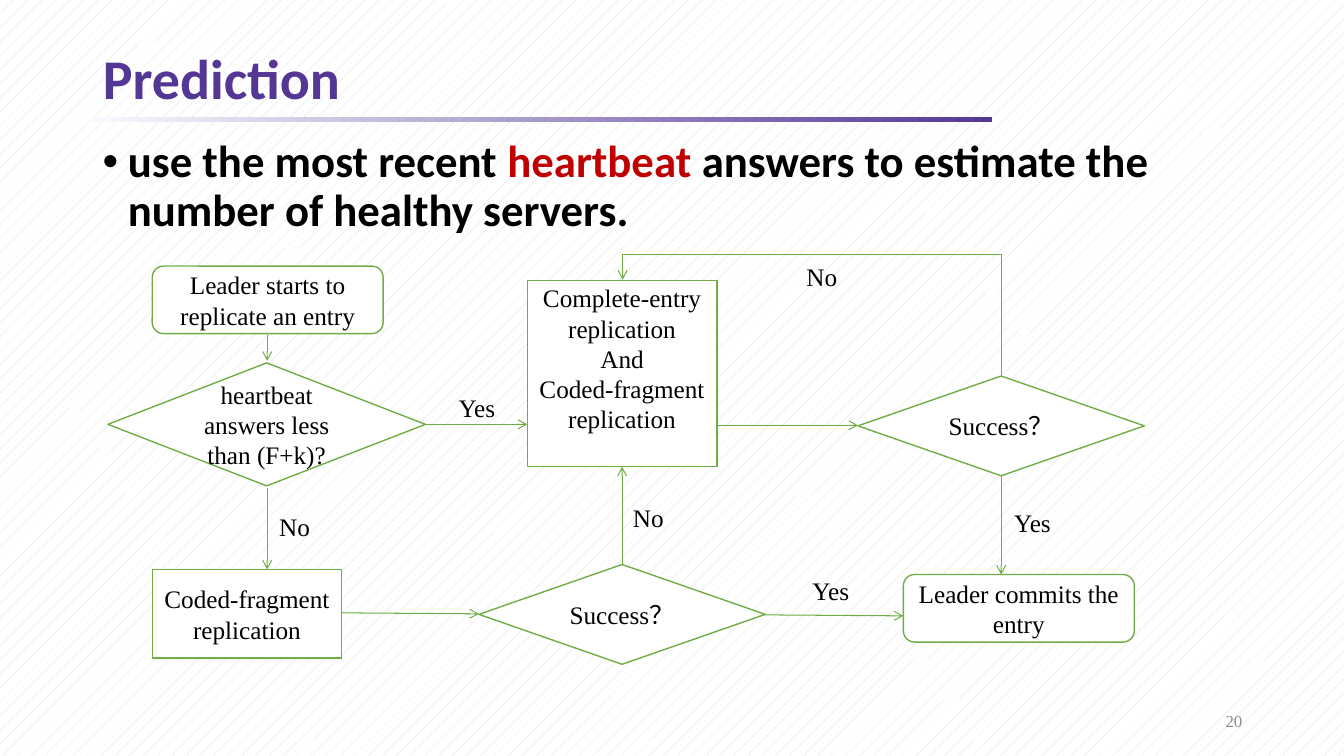
from pptx import Presentation
from pptx import util as u
from pptx.dml import color
from pptx.enum import dml, shapes, text
from pptx.oxml import ns
from lxml import etree

COLORS = {
    "purple": "543795", "pale": "F7FAFD", "green": "70AD47", "red": "C00000",
    "black": "000000", "white": "FFFFFF", "gray": "8C8C8C", "pattern": "D9D9D9",
}
KINDS = shapes.MSO_SHAPE
ALIGN = text.PP_ALIGN
ANCHOR = text.MSO_ANCHOR


def rgb(name):
    return color.RGBColor.from_string(COLORS[name])


def inches(*values):
    return [u.Inches(value) for value in values]


class FlowSlide:
    """Holds the page and the flowchart style."""
    flow_font, head_font = "Times New Roman", "Calibri"

    def __init__(self, deck):
        self.page = deck.slides.add_slide(deck.slide_layouts[5])
        fill = self.page.background.fill
        fill.patterned()
        fill.pattern = dml.MSO_PATTERN.PERCENT_5
        fill.fore_color.rgb, fill.back_color.rgb = rgb("pattern"), rgb("white")

    def span(self, para, words, size=18, ink="black", font=flow_font, bold=False):
        span = para.add_run()
        span.text = words
        span.font.size, span.font.name, span.font.bold = u.Pt(size), font, bold
        span.font.color.rgb = rgb(ink)

    def title(self, words, at):
        box = self.page.shapes.title
        box.left, box.top, box.width, box.height = inches(*at)
        frame = box.text_frame
        frame.auto_size = text.MSO_AUTO_SIZE.NONE
        frame.vertical_anchor = ANCHOR.MIDDLE
        para = frame.paragraphs[0]
        para.alignment, para.line_spacing = ALIGN.LEFT, 0.9
        self.span(para, words, 40, "purple", self.head_font, True)

    def rule(self, at):
        bar = self.page.shapes.add_shape(KINDS.RECTANGLE, *inches(*at))
        bar.shadow.inherit = False
        bar.line.fill.background()
        bar.fill.gradient()
        bar.fill.gradient_angle = 0
        for stop, name in zip(bar.fill.gradient_stops, ("pale", "purple")):
            stop.color.rgb = rgb(name)

    def textbox(self, at):
        frame = self.page.shapes.add_textbox(*inches(*at)).text_frame
        frame.word_wrap = True
        return frame

    def bullet(self, spans, at):
        para = self.textbox(at).paragraphs[0]
        props = para._p.get_or_add_pPr()
        props.set("marL", str(u.Inches(0.25)))
        props.set("indent", str(u.Inches(-0.25)))
        etree.SubElement(props, ns.qn("a:buFont")).set("typeface", "Arial")
        etree.SubElement(props, ns.qn("a:buChar")).set("char", "•")
        para.line_spacing = 0.9
        for words, ink in spans:
            self.span(para, words, 32, ink, self.head_font, True)

    def label(self, words, left, top):
        frame = self.textbox((left, top, 0.63, 0.4))
        frame.auto_size = text.MSO_AUTO_SIZE.SHAPE_TO_FIT_TEXT
        self.span(frame.paragraphs[0], words)

    def page_number(self, words, at):
        frame = self.textbox(at)
        frame.vertical_anchor = ANCHOR.MIDDLE
        frame.paragraphs[0].alignment = ALIGN.RIGHT
        self.span(frame.paragraphs[0], words, 12, "gray")

    def node(self, kind, lines, at, bottom=0.05):
        box = self.page.shapes.add_shape(kind, *inches(*at))
        box.shadow.inherit = False
        box.fill.solid()
        box.fill.fore_color.rgb = rgb("white")
        box.line.color.rgb, box.line.width = rgb("green"), u.Pt(1)
        frame = box.text_frame
        frame.word_wrap, frame.vertical_anchor = True, ANCHOR.MIDDLE
        frame.margin_bottom = u.Inches(bottom)
        for index, words in enumerate(lines):
            para = frame.add_paragraph() if index else frame.paragraphs[0]
            para.alignment = ALIGN.CENTER
            self.span(para, words)

    def arrow(self, ends, kind=shapes.MSO_CONNECTOR.STRAIGHT):
        link = self.page.shapes.add_connector(kind, *inches(*ends))
        link.line.color.rgb, link.line.width = rgb("green"), u.Pt(0.75)
        props = link._element.spPr
        etree.SubElement(props.find(ns.qn("a:ln")), ns.qn("a:tailEnd")).set("type", "arrow")
        etree.SubElement(props, ns.qn("a:effectLst"))
        return props

    def loop_arrow(self, ends, bend):
        # Quarter turn left, with the bend beyond the end point
        props = self.arrow(ends, shapes.MSO_CONNECTOR.ELBOW)
        props.find(ns.qn("a:xfrm")).set("rot", str(270 * 60000))
        geometry = props.find(ns.qn("a:prstGeom"))
        guides = geometry.find(ns.qn("a:avLst"))
        if guides is None:
            guides = etree.SubElement(geometry, ns.qn("a:avLst"))
        guide = etree.SubElement(guides, ns.qn("a:gd"))
        guide.set("name", "adj1")
        guide.set("fmla", f"val {round(bend * 100000)}")


def main():
    deck = Presentation()
    deck.slide_width, deck.slide_height = inches(13.33, 7.5)
    slide = FlowSlide(deck)

    # Heading and statement
    slide.rule((0.92, 1.16, 8.92, 0.05))
    slide.page_number("20", (9.42, 6.95, 3, 0.4))
    slide.title("Prediction", (0.92, 0.43, 11.5, 0.75))
    slide.bullet([
        ("use the most recent ", "black"),
        ("heartbeat", "red"),
        (" answers to estimate the number of healthy servers.", "black"),
    ], (0.92, 1.33, 11.5, 5.43))

    # Flowchart steps
    coded = "Coded-fragment replication"
    terminal, step, decision = KINDS.ROUNDED_RECTANGLE, KINDS.RECTANGLE, KINDS.DIAMOND
    slide.node(terminal, ["Leader starts to replicate an entry"], (1.51, 2.64, 2.29, 0.67))
    slide.node(decision, ["Success？"], (4.75, 5.6, 2.84, 0.99))
    slide.node(step, ["Complete-entry replication", "And", coded],
               (5.23, 2.78, 1.88, 1.85), bottom=0.35)
    slide.node(step, [coded], (1.51, 5.65, 1.88, 0.88))
    slide.node(decision, ["heartbeat answers less than (F+k)?"], (1.07, 3.6, 3.15, 1.22))
    slide.node(terminal, ["Leader commits the entry"], (8.96, 5.7, 2.29, 0.67))
    slide.node(decision, ["Success？"], (8.51, 3.73, 2.84, 0.99))

    # Arrows
    for ends in [
        (2.65, 3.32, 2.65, 3.58), (2.65, 4.84, 2.65, 5.65),
        (3.38, 6.08, 4.75, 6.09), (7.59, 6.1, 8.96, 6.11),
        (4.23, 4.21, 5.23, 4.21), (7.11, 4.22, 8.51, 4.22),
        (6.17, 5.6, 6.17, 4.63), (9.93, 4.71, 9.93, 5.7),
    ]:
        slide.arrow(ends)
    slide.loop_arrow((7.58, 5.13, 8.53, 1.37), bend=1.26)

    # Branch labels
    for words, left, top in [
        ("Yes", 4.45, 3.84), ("No", 2.67, 5.02), ("No", 6.18, 4.93),
        ("No", 7.9, 2.54), ("Yes", 9.96, 4.98), ("Yes", 7.96, 5.66),
    ]:
        slide.label(words, left, top)

    deck.save("out.pptx")


if __name__ == "__main__":
    main()
